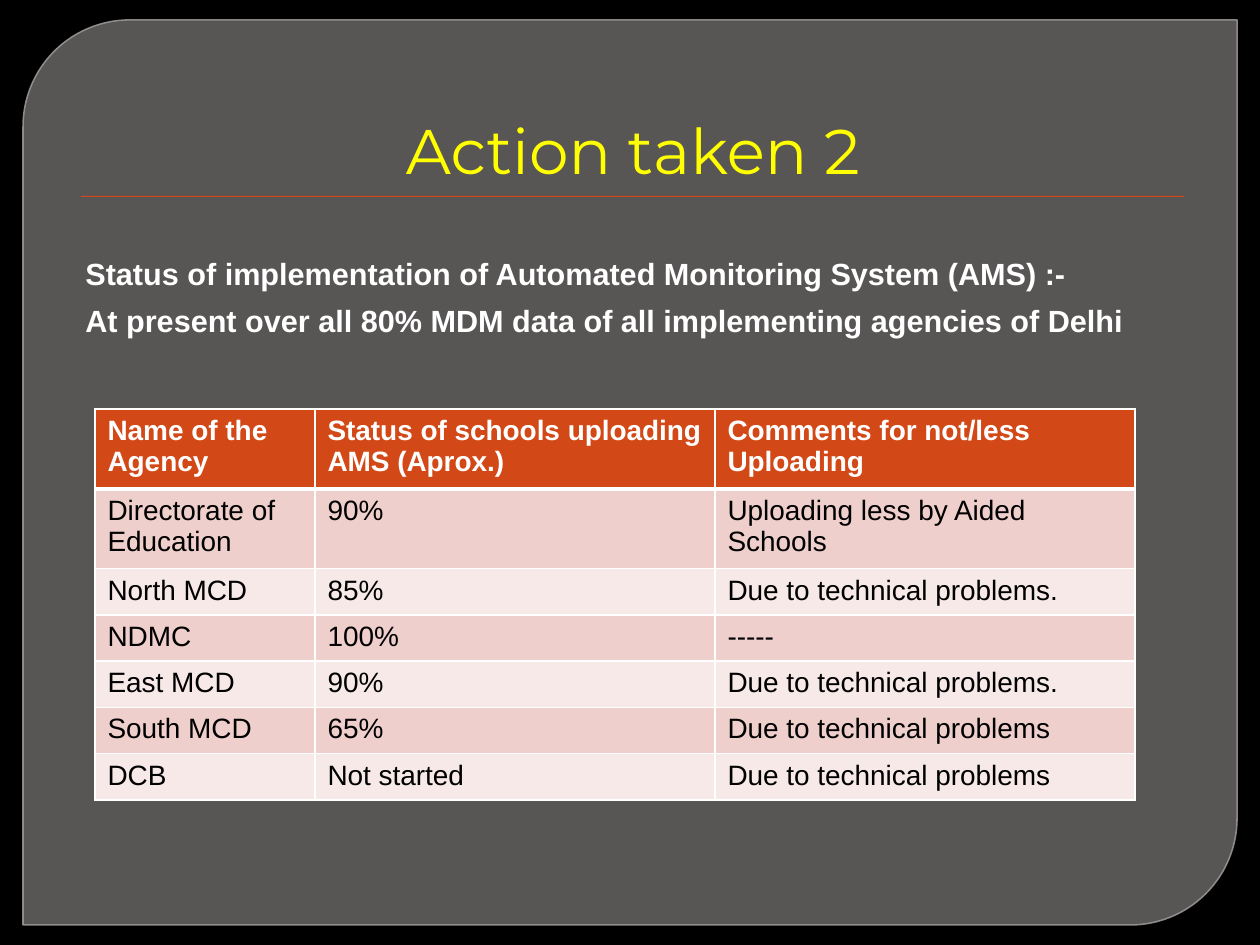
from pptx import Presentation
from pptx.dml.color import RGBColor
from pptx.enum.shapes import MSO_SHAPE as Shape
from pptx.enum.text import MSO_ANCHOR as Anchor, PP_ALIGN as Align
from pptx.oxml import parse_xml
from pptx.oxml.ns import nsdecls, qn
from pptx.util import Pt

PX = 914400 / 126
NS = nsdecls("a")


def tint(code):
    return RGBColor.from_string(code)


def write(para, text, size, face, color, bold=False):
    run = para.add_run()
    run.text = text
    font = run.font
    font.size, font.name, font.bold = Pt(size), face, bold
    font.color.rgb = tint(color)


deck = Presentation()
deck.slide_width, deck.slide_height = int(1260 * PX), int(945 * PX)
slide = deck.slides.add_slide(deck.slide_layouts[6])
slide.background.fill.solid()
slide.background.fill.fore_color.rgb = tint("000000")
shapes = slide.shapes

# Panel with two round corners
box = [int(n * PX) for n in (23, 20, 1214, 905)]
panel = shapes.add_shape(Shape.ROUND_2_DIAG_RECTANGLE, *box)
panel.adjustments[0], panel.adjustments[1] = 0.118, 0
panel.shadow.inherit = False
panel.fill.solid()
panel.fill.fore_color.rgb = tint("888484")
panel.line.color.rgb = tint("9D9898")
panel.line.width = Pt(0.87)
fill = panel.fill._xPr.find(qn("a:solidFill"))
edge = panel.line._ln.find(qn("a:solidFill"))
for paint, alpha in ((fill, 65000), (edge, 88000)):
    paint[0].append(parse_xml(f'<a:alpha {NS} val="{alpha}"/>'))

# Rule under the title
box = [int(n * PX) for n in (81, 196, 1103, 1)]
rule = shapes.add_shape(Shape.RECTANGLE, *box)
rule.shadow.inherit = False
rule.fill.solid()
rule.fill.fore_color.rgb = tint("D34817")
rule.line.fill.background()
rule._element.spPr.find(qn("a:effectLst")).append(parse_xml(
    f'<a:outerShdw {NS} blurRad="12700" dist="12700" dir="5400000">'
    '<a:srgbClr val="000000"><a:alpha val="75000"/></a:srgbClr></a:outerShdw>'))

# Title and status lines
status = ("Status of implementation of Automated Monitoring System (AMS) :-",
          "At present over all 80% MDM data of all implementing agencies of Delhi")
blocks = (
    ((66, 35, 1134, 158), ("Action taken 2",), 36, "Montserrat", "FFFF00", False, Align.CENTER),
    ((73, 231, 1134, 114), status, 17.5, "Arial", "FFFFFF", True, Align.LEFT),
)
for place, lines, size, face, color, bold, align in blocks:
    frame = shapes.add_textbox(*[int(n * PX) for n in place]).text_frame
    frame.word_wrap = True
    frame.vertical_anchor = Anchor.BOTTOM
    for i, line in enumerate(lines):
        para = frame.add_paragraph() if i else frame.paragraphs[0]
        para.alignment = align
        if i:
            para.space_before = Pt(6)
        write(para, line, size, face, color, bold)

# Agency table
rows = (
    ("Name of the Agency", "Status of schools uploading AMS (Aprox.)",
     "Comments for not/less Uploading"),
    ("Directorate of Education", "90%", "Uploading less by Aided Schools"),
    ("North MCD", "85%", "Due to technical problems."),
    ("NDMC", "100%", "-----"),
    ("East MCD", "90%", "Due to technical problems."),
    ("South MCD", "65%", "Due to technical problems"),
    ("DCB", "Not started", "Due to technical problems"),
)
widths = (220, 400, 420)
heights = (75, 75, 44, 44, 44, 44, 44)
box = [int(n * PX) for n in (95, 409, sum(widths), sum(heights))]
table = shapes.add_table(len(rows), len(widths), *box).table
for col, width in zip(table.columns, widths):
    col.width = int(width * PX)
for r, row in enumerate(rows):
    table.rows[r].height = int(heights[r] * PX)
    back = "D34817" if r == 0 else ("F7E9E8", "EFCFCC")[r % 2]
    for c, text in enumerate(row):
        cell = table.cell(r, c)
        props = cell._tc.get_or_add_tcPr()
        for side in "LRTB":
            thick = (r, side) in ((0, "B"), (1, "T"))
            props.append(parse_xml(
                f'<a:ln{side} {NS} w="{38100 if thick else 12700}"><a:solidFill>'
                f'<a:srgbClr val="FFFFFF"/></a:solidFill></a:ln{side}>'))
        cell.fill.solid()
        cell.fill.fore_color.rgb = tint(back)
        write(cell.text_frame.paragraphs[0], text, 16, "Arial",
              "000000" if r else "FFFFFF", r == 0)

deck.save("out.pptx")
